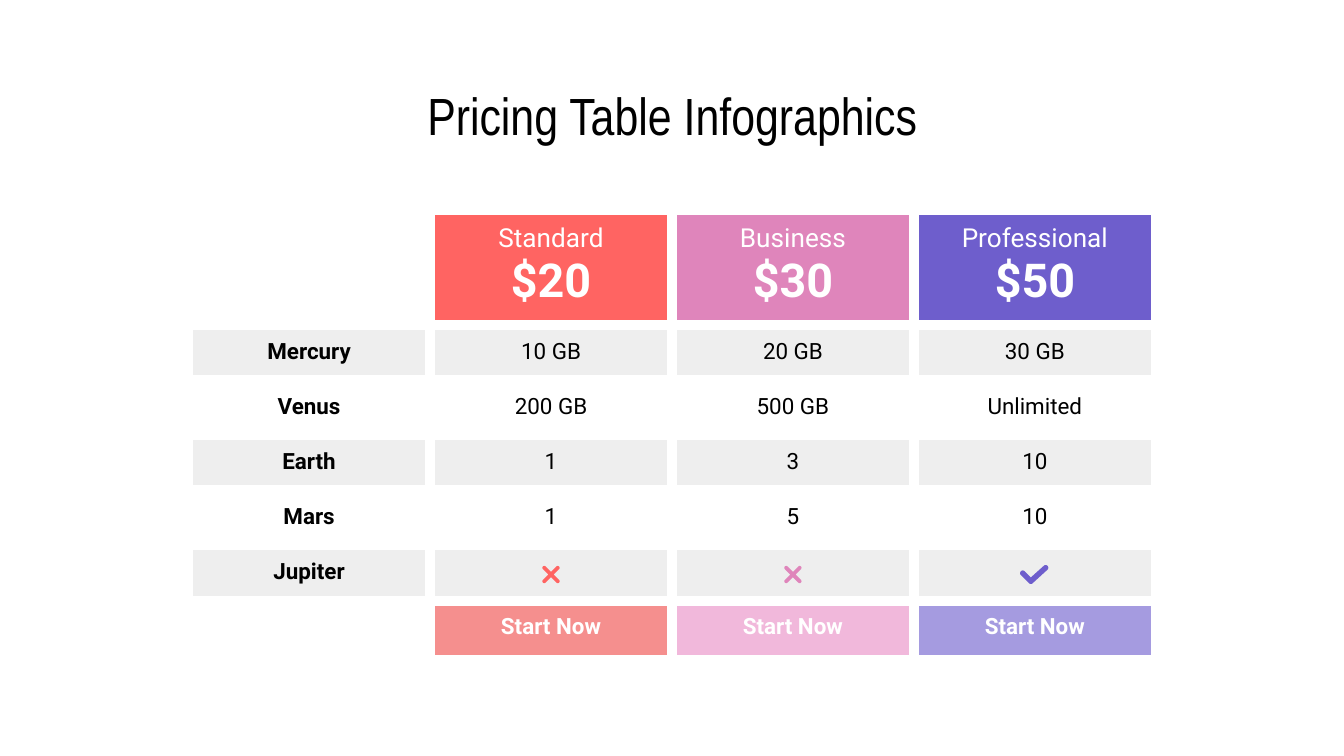
import math
from dataclasses import dataclass

import pptx
import pptx.dml.color
import pptx.enum.text
import pptx.oxml
import pptx.oxml.ns
import pptx.util
from lxml import etree

Inches = pptx.util.Inches


@dataclass(frozen=True)
class Theme:
    title_font: str = "Arial Narrow"
    body_font: str = "Roboto"
    title_size: int = 28
    plan_size: int = 14
    price_size: int = 25
    body_size: int = 12
    border_width: int = 6
    ink: str = "000000"
    white: str = "FFFFFF"
    band: str = "EEEEEE"


THEME = Theme()
SLIDE_WIDTH = 10
SLIDE_HEIGHT = SLIDE_WIDTH * 9 / 16
LEFT, TOP = 1.4, 1.56
COLUMN_WIDTH = 1.8
HEADER_HEIGHT, ROW_HEIGHT, BUTTON_HEIGHT = 0.86, 0.41, 0.44
MARGIN = 0.1
ICON_DROP = 0.01

# name, price, colour, button colour, icon
PLANS = [
    ("Standard", "$20", "FF6462", "F58F8E", "cross"),
    ("Business", "$30", "DF85BB", "F1B8DB", "cross"),
    ("Professional", "$50", "6E5ECC", "A59BE0", "tick"),
]
FEATURES = [
    ("Mercury", "10 GB", "20 GB", "30 GB"),
    ("Venus", "200 GB", "500 GB", "Unlimited"),
    ("Earth", "1", "3", "10"),
    ("Mars", "1", "5", "10"),
    ("Jupiter", "", "", ""),
]


def rgb(color):
    return pptx.dml.color.RGBColor.from_string(color)


def format_run(run, color, **values):
    for name, value in values.items():
        setattr(run.font, name, value)
    run.font.color.rgb = rgb(color)


def add_title(slide, text):
    title = slide.shapes.title
    box = {"left": 0.256 * SLIDE_WIDTH, "top": 0.105 * SLIDE_HEIGHT,
           "width": 0.488 * SLIDE_WIDTH, "height": 0.094 * SLIDE_HEIGHT}
    for name, value in box.items():
        setattr(title, name, Inches(value))
    frame = title.text_frame
    frame.vertical_anchor = pptx.enum.text.MSO_ANCHOR.MIDDLE
    for side in ("left", "top", "right", "bottom"):
        setattr(frame, f"margin_{side}", Inches(MARGIN))
    paragraph = frame.paragraphs[0]
    paragraph.alignment = pptx.enum.text.PP_ALIGN.CENTER
    run = paragraph.add_run()
    run.text = text
    format_run(run, THEME.ink, name=THEME.title_font, size=pptx.util.Pt(THEME.title_size))


def set_borders(cell):
    properties = cell._tc.get_or_add_tcPr()
    for tag in ("a:lnL", "a:lnR", "a:lnT", "a:lnB"):
        line = etree.SubElement(properties, pptx.oxml.ns.qn(tag),
                                w=str(pptx.util.Pt(THEME.border_width)))
        fill = etree.SubElement(line, pptx.oxml.ns.qn("a:solidFill"))
        etree.SubElement(fill, pptx.oxml.ns.qn("a:srgbClr"), val=THEME.white)


def fill_cell(cell, lines=(), fill=None, color=THEME.ink):
    """Format a cell; lines holds (text, size, bold) for each paragraph."""
    for side in ("left", "top", "right", "bottom"):
        setattr(cell, f"margin_{side}", Inches(MARGIN))
    set_borders(cell)
    if fill:
        cell.fill.solid()
        cell.fill.fore_color.rgb = rgb(fill)
    else:
        cell.fill.background()
    frame = cell.text_frame
    for index, (text, size, bold) in enumerate(lines):
        paragraph = frame.add_paragraph() if index else frame.paragraphs[0]
        paragraph.alignment = pptx.enum.text.PP_ALIGN.CENTER
        run = paragraph.add_run()
        run.text = text
        format_run(run, color, name=THEME.body_font, size=pptx.util.Pt(size), bold=bold)
    if not lines:
        # An empty cell would otherwise stretch its row to the default text size.
        etree.SubElement(frame.paragraphs[0]._p, pptx.oxml.ns.qn("a:endParaRPr"),
                         sz=str(THEME.body_size * 100))


def add_pricing_table(slide):
    heights = [HEADER_HEIGHT, *[ROW_HEIGHT] * len(FEATURES), BUTTON_HEIGHT]
    column_count = len(PLANS) + 1
    table = slide.shapes.add_table(
        len(heights), column_count, Inches(LEFT), Inches(TOP),
        Inches(COLUMN_WIDTH * column_count), Inches(sum(heights))).table
    table.first_row = table.horz_banding = False
    for column in table.columns:
        column.width = Inches(COLUMN_WIDTH)
    for row, height in zip(table.rows, heights):
        row.height = Inches(height)

    last = len(heights) - 1
    for row in (0, last):
        fill_cell(table.cell(row, 0))
    for column, (name, price, color, button_color, _) in enumerate(PLANS, 1):
        heading = [(name, THEME.plan_size, False), (price, THEME.price_size, True)]
        fill_cell(table.cell(0, column), heading, color, THEME.white)
        button = [("Start Now", THEME.body_size, True)]
        fill_cell(table.cell(last, column), button, button_color, THEME.white)
    for row, values in enumerate(FEATURES, 1):
        band = THEME.band if row % 2 else THEME.white
        for column, text in enumerate(values):
            lines = [(text, THEME.body_size, column == 0)] if text else []
            fill_cell(table.cell(row, column), lines, band)


def arc(x, y, radius, start, end, steps=8):
    """Points on an arc, with angles in degrees running clockwise."""
    angles = [math.radians(start + (end - start) * i / steps) for i in range(steps + 1)]
    return [(x + radius * math.cos(a), y + radius * math.sin(a)) for a in angles]


def cross_outline(reach=0.05, radius=0.014):
    points = []
    for angle in range(45, 405, 90):
        x = math.copysign(reach, math.cos(math.radians(angle)))
        y = math.copysign(reach, math.sin(math.radians(angle)))
        points += arc(x, y, radius, angle - 90, angle + 90)
        points += arc(0, 0, radius * math.sqrt(2), angle + 45, angle + 45, 1)[:1]
    return points


def tick_outline(radius=0.02):
    elbow = (-0.03, 0.05)
    return (arc(-0.09, -0.01, radius, 135, 315)
            + arc(*elbow, radius * math.sqrt(2), 270, 270, 1)[:1]
            + arc(0.08, -0.05, radius, 225, 405)
            + arc(*elbow, radius, 45, 135))


def add_icon(slide, outline, column, row, color):
    """Draw an outline in the middle of a feature cell."""
    center_x = LEFT + COLUMN_WIDTH * (column + 0.5)
    center_y = TOP + HEADER_HEIGHT + ROW_HEIGHT * (row + 0.5) + ICON_DROP
    points = [(Inches(center_x + x), Inches(center_y + y)) for x, y in outline]
    builder = slide.shapes.build_freeform(*points[0])
    builder.add_line_segments(points[1:], close=True)
    shape = builder.convert_to_shape()
    shape.shadow.inherit = False
    shape.fill.solid()
    shape.fill.fore_color.rgb = rgb(color)
    shape.line.fill.background()


def main():
    presentation = pptx.Presentation()
    presentation.slide_width = Inches(SLIDE_WIDTH)
    presentation.slide_height = Inches(SLIDE_HEIGHT)
    slide = presentation.slides.add_slide(presentation.slide_layouts[5])
    add_title(slide, "Pricing Table Infographics")
    add_pricing_table(slide)
    outlines = {"cross": cross_outline(), "tick": tick_outline()}
    for column, (_, _, color, _, icon) in enumerate(PLANS, 1):
        add_icon(slide, outlines[icon], column, len(FEATURES) - 1, color)
    presentation.save("out.pptx")


if __name__ == "__main__":
    main()
